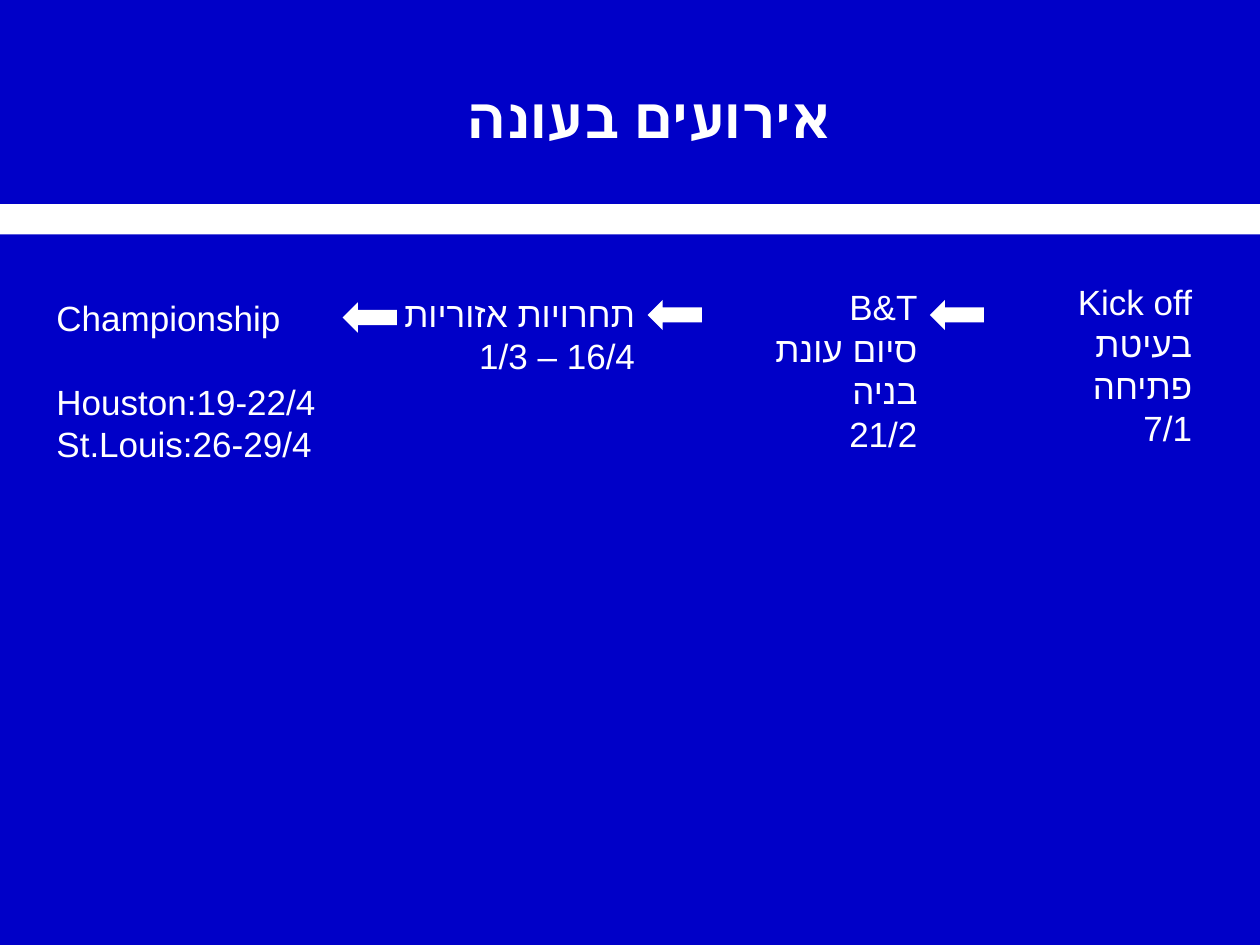
import pptx
import pptx.util
import pptx.dml.color
import pptx.enum.shapes
import pptx.enum.text
import pptx.oxml
import pptx.oxml.ns
from dataclasses import dataclass

ALIGN = pptx.enum.text.PP_ALIGN
ANCHOR = pptx.enum.text.MSO_ANCHOR
SHAPE = pptx.enum.shapes.MSO_SHAPE


@dataclass
class Theme:
    background: str = "0000C8"
    ink: str = "FFFFFF"
    title_font: str = "Open Sans"
    body_font: str = "Arial"
    title_size: int = 32
    body_size: int = 20
    leading: int = 24


def color(value):
    return pptx.dml.color.RGBColor.from_string(value)


def write(p, text, *, size, font, ink, bold=False, align=ALIGN.LEFT, leading=None, before=0):
    """Put one formatted run of text in paragraph p."""
    p.alignment = align
    p.space_before = pptx.util.Pt(before)
    if leading:
        p.line_spacing = pptx.util.Pt(leading)
    r = p.add_run()
    r.text = text
    r.font.size = pptx.util.Pt(size)
    r.font.bold = bold
    r.font.name = font
    r.font.color.rgb = color(ink)
    # Hebrew takes the complex-script typeface
    cs = pptx.oxml.parse_xml(f'<a:cs {pptx.oxml.ns.nsdecls("a")} typeface="{font}"/>')
    r.font._element.append(cs)


class Deck:
    """Style and current slide; lengths are columns and rows of a 100 x 75 grid."""

    COLS, ROWS = 100, 75

    def __init__(self, theme):
        self.theme = theme
        self.prs = pptx.Presentation()
        self.prs.slide_width = pptx.util.Inches(10)
        self.prs.slide_height = pptx.util.Inches(7.5)

    def box(self, x, y, w, h):
        col = self.prs.slide_width / self.COLS
        row = self.prs.slide_height / self.ROWS
        return round(x * col), round(y * row), round(w * col), round(h * row)

    def add_slide(self):
        self.s = self.prs.slides.add_slide(self.prs.slide_layouts[5])
        fill = self.s.background.fill
        fill.solid()
        fill.fore_color.rgb = color(self.theme.background)

    def title(self, text, *place):
        sp = self.s.shapes.title
        sp.left, sp.top, sp.width, sp.height = self.box(*place)
        tf = sp.text_frame
        tf.vertical_anchor = ANCHOR.MIDDLE
        tf.margin_left = tf.margin_right = pptx.util.Inches(0.1)
        tf.margin_top = tf.margin_bottom = pptx.util.Inches(0.1)
        write(tf.paragraphs[0], text, size=self.theme.title_size, font=self.theme.title_font,
              ink=self.theme.ink, bold=True, align=ALIGN.CENTER)

    def shape(self, kind, *place):
        sp = self.s.shapes.add_shape(kind, *self.box(*place))
        sp.shadow.inherit = False
        sp.fill.solid()
        sp.fill.fore_color.rgb = color(self.theme.ink)
        sp.line.fill.background()

    def text(self, lines, *place, align=ALIGN.RIGHT, gap_after_first=0):
        tf = self.s.shapes.add_textbox(*self.box(*place)).text_frame
        tf.word_wrap = True
        tf.auto_size = pptx.enum.text.MSO_AUTO_SIZE.SHAPE_TO_FIT_TEXT
        for i, line in enumerate(lines):
            p = tf.add_paragraph() if i else tf.paragraphs[0]
            write(p, line, size=self.theme.body_size, font=self.theme.body_font,
                  ink=self.theme.ink, align=align, leading=self.theme.leading,
                  before=gap_after_first if i == 1 else 0)


def main():
    theme = Theme()
    deck = Deck(theme)
    deck.add_slide()

    # Heading and white band
    deck.shape(SHAPE.RECTANGLE, 0, 16.2, deck.COLS, 2.4)
    deck.title("אירועים בעונה", 16.1, 3, 70.9, 12.5)

    # Season events, first one on the right
    events = [
        (["Kick off", "בעיטת פתיחה", "7/1"], (78.3, 21.8, 17.3, 11.1)),
        (["B&T", "סיום עונת בניה", "21/2"], (55.7, 22.2, 18.1, 11.1)),
        (["תחרויות אזוריות", "1/3 – 16/4"], (30.3, 22.7, 21.1, 7.7)),
    ]
    for lines, place in events:
        deck.text(lines, *place)
    deck.text(["Championship", "Houston:19-22/4", "St.Louis:26-29/4"], 3.5, 23, 24.6, 14.5,
              align=ALIGN.LEFT, gap_after_first=theme.leading)

    # Arrows from each event to the next
    for x, y in [(73.8, 23.8), (51.4, 23.8), (27.2, 24)]:
        deck.shape(SHAPE.LEFT_ARROW, x, y, 4.3, 2.4)

    deck.prs.save("out.pptx")


if __name__ == "__main__":
    main()
